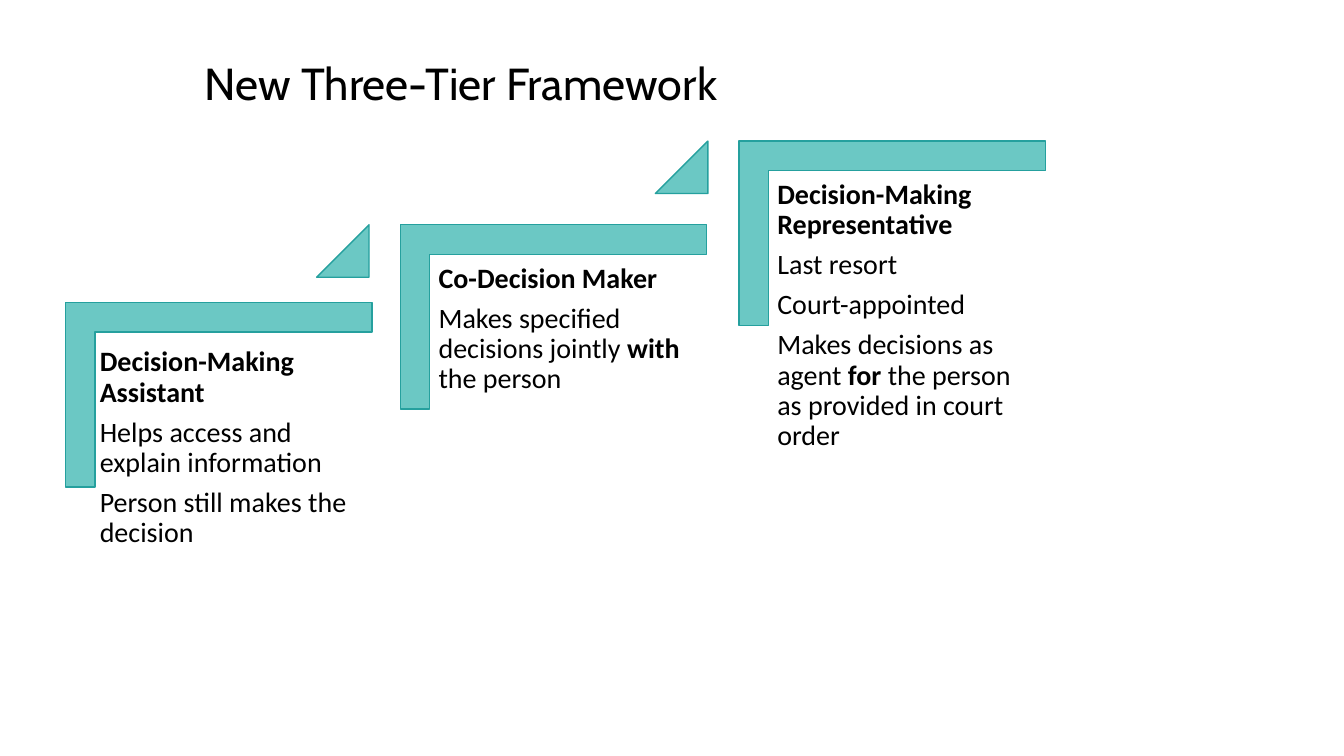
from pptx import Presentation
from pptx.dml.color import RGBColor
from pptx.enum.shapes import MSO_SHAPE
from pptx.enum.text import MSO_ANCHOR, PP_ALIGN
from pptx.util import Inches, Pt

CORNER, TRIANGLE = MSO_SHAPE.CORNER, MSO_SHAPE.ISOSCELES_TRIANGLE
MIDDLE, TOP, LEFT = MSO_ANCHOR.MIDDLE, MSO_ANCHOR.TOP, PP_ALIGN.LEFT
TEAL, DARK_TEAL, BLACK = "6BC8C4", "25A09E", "000000"

# Content: each paragraph is a list of (text, bold) spans
TITLE = "New Three-Tier Framework"
TIERS = [
    {"frame": (0.65, 3.0), "text": (0.91, 3.37), "paragraphs": [
        [("Decision-Making Assistant", True)],
        [("Helps access and explain information", False)],
        [("Person still makes the decision", False)]]},
    {"frame": (3.97, 2.23), "text": (4.27, 2.54), "paragraphs": [
        [("Co-Decision Maker", True)],
        [("Makes specified decisions jointly ", False), ("with", True),
         (" the person", False)]]},
    {"frame": (7.33, 1.4), "text": (7.63, 1.71), "paragraphs": [
        [("Decision-Making Representative", True)],
        [("Last resort", False)],
        [("Court-appointed", False)],
        [("Makes decisions as agent ", False), ("for ", True),
         ("the person as provided in court order", False)]]},
]
FRAME_WIDTH, FRAME_HEIGHT, FRAME_ARM = 3.04, 1.83, 0.16
TEXT_WIDTH, TEXT_HEIGHT, TEXT_INSET = 2.74, 2.4, 0.08
STEP_SIZE, STEP_LEAD = 0.52, 0.83  # a step sits left of the next frame


def color(value):
    return RGBColor.from_string(value)


def set_font(font, name, size):
    font.name, font.size = name, Pt(size)
    font.color.rgb = color(BLACK)


def add_teal_shape(page, kind, left, top, width, height, adjustments):
    shape = page.shapes.add_shape(
        kind, Inches(left), Inches(top), Inches(width), Inches(height))
    shape.shadow.inherit = False
    shape.fill.solid()
    shape.fill.fore_color.rgb = color(TEAL)
    shape.line.color.rgb = color(DARK_TEAL)
    shape.line.width = Pt(1)
    for index, value in enumerate(adjustments):
        shape.adjustments[index] = value
    return shape


def add_frame(page, left, top):
    # The corner is turned a quarter, so its sides swap about the centre
    shift = (FRAME_WIDTH - FRAME_HEIGHT) / 2
    frame = add_teal_shape(page, CORNER, left + shift, top - shift,
                           FRAME_HEIGHT, FRAME_WIDTH, (FRAME_ARM, FRAME_ARM))
    frame.rotation = 90


def add_tier_text(page, left, top, paragraphs):
    box = page.shapes.add_textbox(
        Inches(left), Inches(top), Inches(TEXT_WIDTH), Inches(TEXT_HEIGHT))
    frame = box.text_frame
    frame.word_wrap = True
    frame.vertical_anchor = TOP
    frame.margin_left = frame.margin_right = Inches(TEXT_INSET)
    frame.margin_top = frame.margin_bottom = Inches(TEXT_INSET)
    for index, spans in enumerate(paragraphs):
        para = frame.add_paragraph() if index else frame.paragraphs[0]
        para.line_spacing = 0.9
        para.space_after = Pt(7)
        set_font(para.font, "Calibri", 20)
        for text, bold in spans:
            span = para.add_run()
            span.text = text
            span.font.bold = bold


def main():
    deck = Presentation()
    deck.slide_width, deck.slide_height = Inches(13.33), Inches(7.5)
    page = deck.slides.add_slide(deck.slide_layouts[5])

    # Title
    title = page.shapes.title
    title.left, title.top = Inches(1.93), Inches(0.29)
    title.width, title.height = Inches(9.01), Inches(1.12)
    title.text_frame.text = TITLE
    title.text_frame.vertical_anchor = MIDDLE
    para = title.text_frame.paragraphs[0]
    para.alignment, para.line_spacing = LEFT, 0.9
    set_font(para.font, "Cabin", 32)

    # Rising tiers, each after the first led up to by a triangle
    for index, tier in enumerate(TIERS):
        left, top = tier["frame"]
        if index:
            add_teal_shape(page, TRIANGLE, left - STEP_LEAD, top,
                           STEP_SIZE, STEP_SIZE, (1,))
        add_frame(page, left, top)
        add_tier_text(page, *tier["text"], tier["paragraphs"])

    deck.save("out.pptx")


if __name__ == "__main__":
    main()
